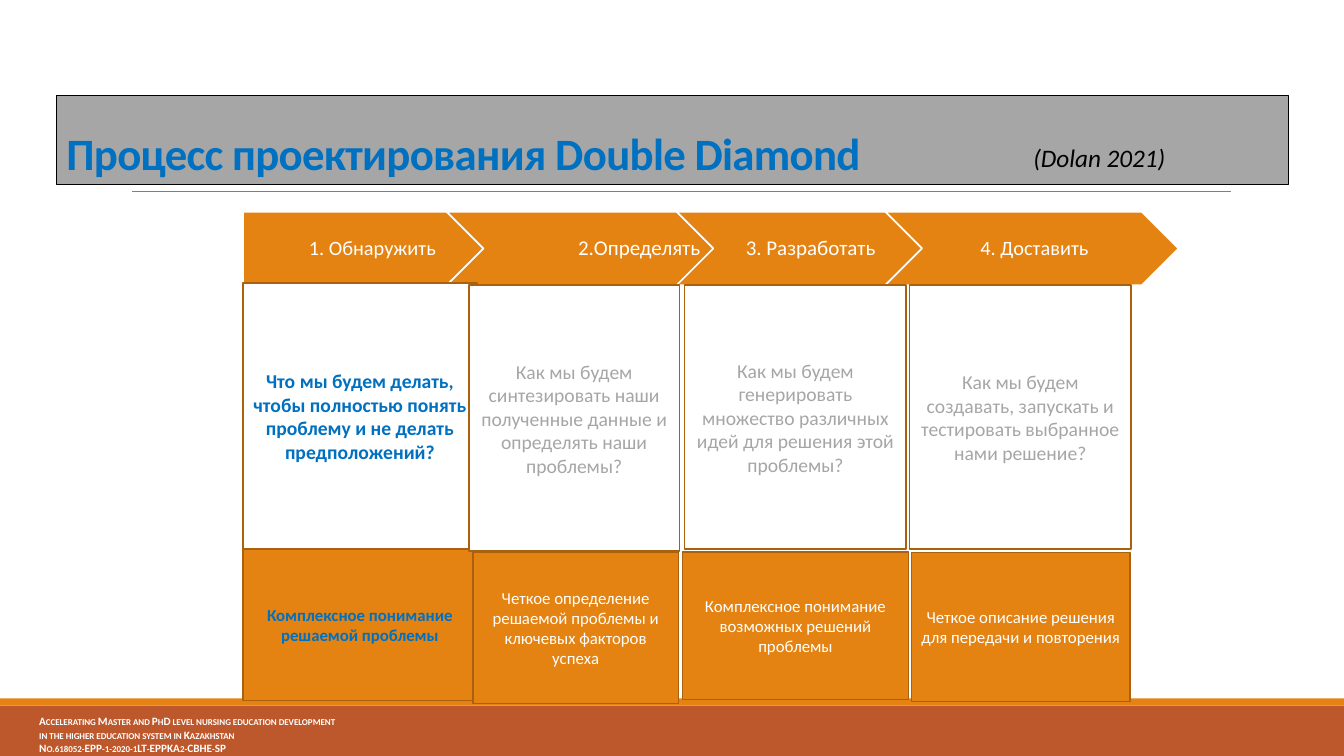
from dataclasses import dataclass

from lxml.etree import SubElement
from pptx import Presentation
from pptx.dml.color import RGBColor
from pptx.enum.shapes import MSO_CONNECTOR, MSO_SHAPE
from pptx.enum.text import MSO_ANCHOR, PP_ALIGN
from pptx.oxml.ns import qn
from pptx.shapes.base import BaseShape
from pptx.slide import Slide
from pptx.text.text import TextFrame
from pptx.util import Inches, Pt

COLORS = {
    "orange": "E48312",
    "brown": "A9610D",
    "rust": "BD582C",
    "blue": "0070C0",
    "silver": "A6A6A6",
    "gray": "808080",
    "white": "FFFFFF",
    "black": "000000",
}
FOOTER = (
    "Accelerating Master and PhD level nursing education development\n"
    "in the higher education system in Kazakhstan\n"
    "No.618052-EPP-1-2020-1LT-EPPKA2-CBHE-SP"
)
ARROW_TOP, ARROW_HEIGHT = 2.1, 0.73
ARROW_POINT = ARROW_HEIGHT / 2


@dataclass(frozen=True)
class Area:
    left: float
    top: float
    width: float
    height: float


@dataclass(frozen=True)
class Style:
    size: float
    color: str
    bold: bool = False
    italic: bool = False
    align: PP_ALIGN = PP_ALIGN.CENTER
    anchor: MSO_ANCHOR = MSO_ANCHOR.MIDDLE
    line_spacing: float = 1.0


@dataclass(frozen=True)
class Step:
    name: str
    name_size: float
    arrow_left: float
    arrow_width: float
    question: str
    question_area: Area
    result: str
    result_area: Area


STEPS = [
    Step("1. Обнаружить", 14.5, 2.41, 2.68,
         "Что мы будем делать, чтобы полностью понять проблему и не делать предположений?",
         Area(2.41, 2.81, 2.32, 2.64),
         "Комплексное понимание решаемой проблемы",
         Area(2.41, 5.45, 2.32, 1.5)),
    Step("2.Определять", 15, 4.43, 3.77,
         "Как мы будем синтезировать наши полученные данные и определять наши проблемы?",
         Area(4.65, 2.83, 2.09, 2.64),
         "Четкое определение решаемой проблемы и ключевых факторов успеха",
         Area(4.69, 5.48, 2.04, 1.5)),
    Step("3. Разработать", 15, 6.71, 2.61,
         "Как мы будем генерировать множество различных идей для решения этой проблемы?",
         Area(6.79, 2.83, 2.2, 2.62),
         "Комплексное понимание возможных решений проблемы",
         Area(6.77, 5.48, 2.24, 1.46)),
    Step("4. Доставить", 14.5, 8.78, 2.91,
         "Как мы будем создавать, запускать и тестировать выбранное нами решение?",
         Area(9.02, 2.83, 2.2, 2.62),
         "Четкое описание решения для передачи и повторения",
         Area(9.04, 5.48, 2.17, 1.48)),
]


def color(name: str) -> RGBColor:
    return RGBColor.from_string(COLORS[name])


def inches(area: Area) -> tuple:
    return tuple(Inches(length) for length in (area.left, area.top, area.width, area.height))


def write(frame: TextFrame, text: str, style: Style, **attributes: str) -> None:
    frame.text = text
    frame.word_wrap = True
    frame.vertical_anchor = style.anchor
    for paragraph in frame.paragraphs:
        paragraph.alignment = style.align
        paragraph.line_spacing = style.line_spacing
        for span in paragraph.runs:
            span.font.name = "Calibri"
            span.font.size = Pt(style.size)
            span.font.bold = style.bold
            span.font.italic = style.italic
            span.font.color.rgb = color(style.color)
            for key, value in attributes.items():
                span.font._element.set(key, value)


def add_block(page: Slide, area: Area, fill: str, line: str = "", line_width: float = 1.25,
              kind: MSO_SHAPE = MSO_SHAPE.RECTANGLE) -> BaseShape:
    block = page.shapes.add_shape(kind, *inches(area))
    block.shadow.inherit = False
    block.fill.solid()
    block.fill.fore_color.rgb = color(fill)
    if line:
        block.line.color.rgb = color(line)
        block.line.width = Pt(line_width)
    else:
        block.line.fill.background()
    return block


def add_label(page: Slide, area: Area, text: str, style: Style, **attributes: str) -> TextFrame:
    frame = page.shapes.add_textbox(*inches(area)).text_frame
    write(frame, text, style, **attributes)
    return frame


def add_rule(page: Slide) -> None:
    rule = page.shapes.add_connector(
        MSO_CONNECTOR.STRAIGHT, Inches(1.31), Inches(1.9), Inches(12.21), Inches(1.9))
    rule.line.color.rgb = color("gray")
    rule.line.width = Pt(0.5)
    SubElement(rule._element.spPr, qn("a:effectLst"))


def add_arrow(page: Slide, step: Step, first: bool) -> None:
    kind = MSO_SHAPE.PENTAGON if first else MSO_SHAPE.CHEVRON
    area = Area(step.arrow_left, ARROW_TOP, step.arrow_width, ARROW_HEIGHT)
    add_block(page, area, "orange", "white", kind=kind)
    notch = 0 if first else ARROW_POINT
    tail = ARROW_POINT / 2 if first else ARROW_POINT
    label_area = Area(step.arrow_left + notch, ARROW_TOP,
                      step.arrow_width - notch - tail, ARROW_HEIGHT)
    frame = add_label(page, label_area, step.name,
                      Style(step.name_size, "white", line_spacing=0.9))
    frame.margin_left = Inches(0.09 if first else 0.07)
    frame.margin_right = Inches(0.02)
    frame.margin_top = frame.margin_bottom = Inches(0.04)


def main() -> None:
    """Build the Double Diamond design process slide."""
    deck = Presentation()
    deck.slide_width, deck.slide_height = Inches(13.33), Inches(7.5)
    page = deck.slides.add_slide(deck.slide_layouts[6])

    add_block(page, Area(0, 7, 13.33, 0.5), "rust")
    add_block(page, Area(0, 6.93, 13.33, 0.07), "orange")
    add_rule(page)
    add_label(page, Area(0.29, 7.04, 4.59, 0.46), FOOTER,
              Style(8, "white", bold=True, align=PP_ALIGN.LEFT, anchor=MSO_ANCHOR.TOP),
              cap="small")

    title = add_block(page, Area(0.56, 0.95, 12.22, 0.88), "silver", "black", 1)
    write(title.text_frame, "Процесс проектирования Double Diamond",
          Style(32, "blue", bold=True, align=PP_ALIGN.LEFT, anchor=MSO_ANCHOR.BOTTOM,
                line_spacing=0.85), spc="-50")
    add_label(page, Area(10.15, 1.36, 2.6, 0.4), "(Dolan 2021)",
              Style(18, "black", italic=True, align=PP_ALIGN.LEFT, anchor=MSO_ANCHOR.TOP))

    for index, step in enumerate(STEPS):
        add_arrow(page, step, index == 0)
    for index, step in enumerate(STEPS):
        current = index == 0
        result = add_block(page, step.result_area, "orange", "brown")
        write(result.text_frame, step.result,
              Style(12, "blue" if current else "white", bold=current))
    for index, step in enumerate(STEPS):
        current = index == 0
        question = add_block(page, step.question_area, "white", "brown")
        write(question.text_frame, step.question,
              Style(14, "blue" if current else "silver", bold=current))

    deck.save("out.pptx")


if __name__ == "__main__":
    main()
